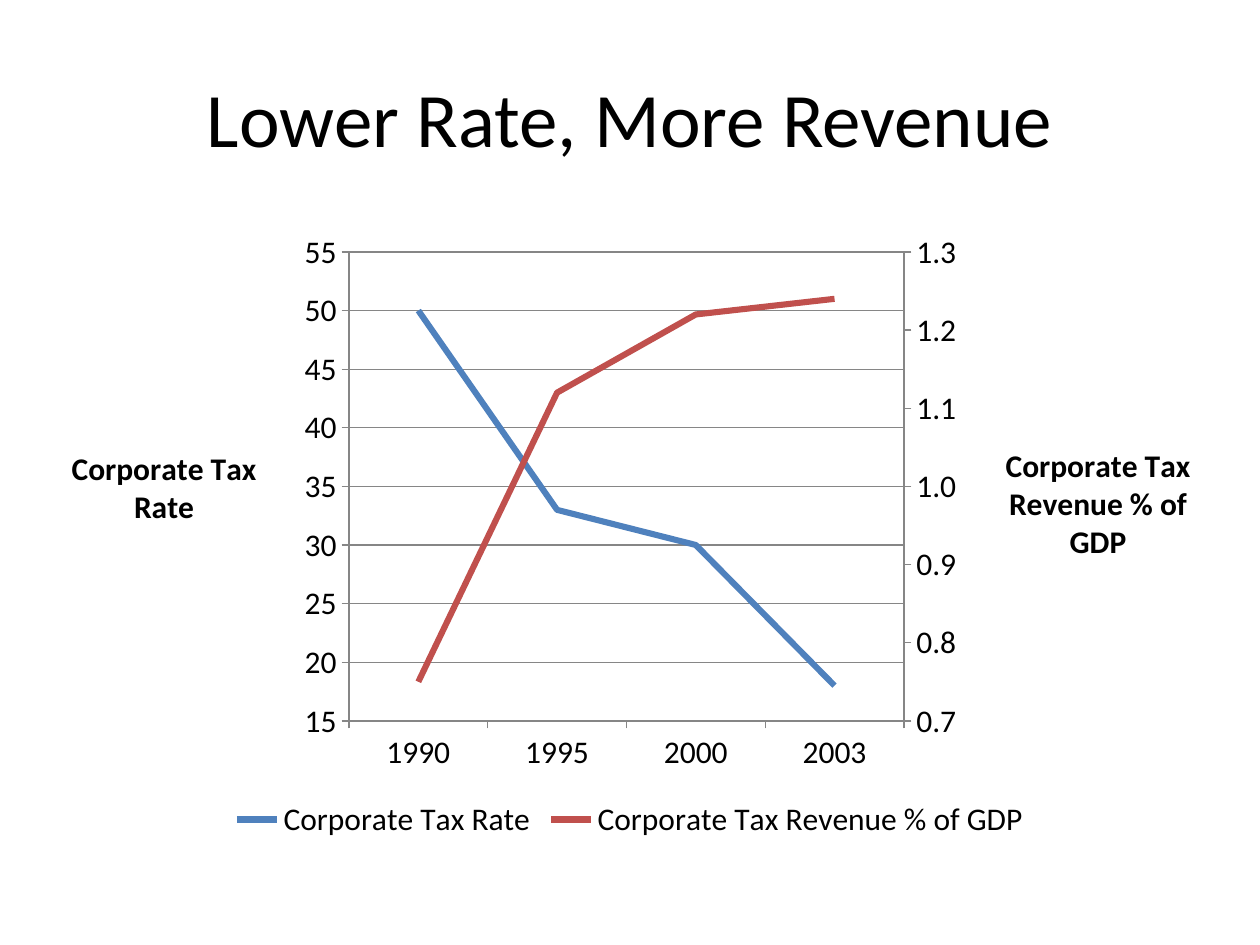
import copy

import lxml.etree
import pptx
import pptx.chart.axis
import pptx.chart.data
import pptx.dml.color
import pptx.enum.chart
import pptx.enum.text
import pptx.oxml.ns
import pptx.util

EMU_PER_PX = 914400 // 126
CHART_BOX = (63, 221, 1134, 624)
FONT = "Calibri"
COLORS = {"text": "000000", "rate": "4F81BD", "revenue": "C0504D", "axis": "868686"}
RATE, REVENUE = "Corporate Tax Rate", "Corporate Tax Revenue % of GDP"
YEARS = [1990, 1995, 2000, 2003]
qn = pptx.oxml.ns.qn


def px(length):
    return pptx.util.Emu(length * EMU_PER_PX)


def color(name):
    return pptx.dml.color.RGBColor.from_string(COLORS[name])


def style_font(font, size=18, bold=False):
    font.name, font.size, font.bold = FONT, pptx.util.Pt(size), bold
    font.color.rgb = color("text")


def write_text(text_frame, text, align=pptx.enum.text.PP_ALIGN.CENTER, **font_format):
    text_frame.text = text
    paragraph = text_frame.paragraphs[0]
    paragraph.alignment = align
    style_font(paragraph.runs[0].font, **font_format)


def set_line(line, name, width):
    line.color.rgb = color(name)
    line.width = pptx.util.Pt(width)


def set_layout(parent, index, **lengths):
    """Place a chart part by px from the chart's top left corner."""
    for old in parent.findall(qn("c:layout")):
        parent.remove(old)
    layout = lxml.etree.Element(qn("c:layout"))
    manual = lxml.etree.SubElement(layout, qn("c:manualLayout"))
    if "w" in lengths:
        lxml.etree.SubElement(manual, qn("c:layoutTarget")).set("val", "inner")
    for mode in ("xMode", "yMode"):
        lxml.etree.SubElement(manual, qn("c:" + mode)).set("val", "edge")
    for name, length in lengths.items():
        whole = CHART_BOX[2] if name in "xw" else CHART_BOX[3]
        lxml.etree.SubElement(manual, qn("c:" + name)).set("val", str(length / whole))
    parent.insert(index, layout)


def add_title(slide):
    title = slide.shapes.title
    title.left, title.top, title.width, title.height = map(px, (63, 38, 1134, 157))
    title.text_frame.vertical_anchor = pptx.enum.text.MSO_ANCHOR.MIDDLE
    write_text(title.text_frame, "Lower Rate, More Revenue", size=44)


def split_to_second_axis(chart):
    """Move the last series to a second line plot and return both value axes."""
    first_axis = chart.value_axis
    first = chart.plots[0]._element
    second = copy.deepcopy(first)
    first.remove(first.findall(qn("c:ser"))[-1])
    second.remove(second.find(qn("c:ser")))
    first.addnext(second)

    category = copy.deepcopy(chart.category_axis._element)
    value = copy.deepcopy(first_axis._element)
    first_axis._element.addnext(value)
    value.addnext(category)
    ids = {category: "50010", value: "50020"}
    for reference, new_id in zip(second.findall(qn("c:axId")), ids.values()):
        reference.set("val", new_id)
    for axis, other in ((category, value), (value, category)):
        axis.find(qn("c:axId")).set("val", ids[axis])
        axis.find(qn("c:crossAx")).set("val", ids[other])
    value.find(qn("c:axPos")).set("val", "r")
    value.find(qn("c:crosses")).set("val", "max")
    pptx.chart.axis.CategoryAxis(category).visible = False
    return first_axis, pptx.chart.axis.ValueAxis(value)


def format_axis(axis):
    style_font(axis.tick_labels.font)
    set_line(axis.format.line, "axis", 0.75)
    axis.major_tick_mark = pptx.enum.chart.XL_TICK_MARK.OUTSIDE
    axis.minor_tick_mark = pptx.enum.chart.XL_TICK_MARK.NONE


def format_value_axis(axis, title, low, high, step, number_format, x, y):
    format_axis(axis)
    axis.minimum_scale, axis.maximum_scale, axis.major_unit = low, high, step
    axis.tick_labels.number_format = number_format
    axis.tick_labels.number_format_is_linked = False
    write_text(axis.axis_title.text_frame, title, bold=True)
    element = axis._element.find(qn("c:title"))
    body = element.find(".//" + qn("a:bodyPr"))
    body.set("rot", "0")
    body.set("vert", "horz")
    set_layout(element, 1, x=x, y=y)


def add_tax_chart(slide):
    data = pptx.chart.data.CategoryChartData(number_format="General")
    data.categories = YEARS
    data.add_series(RATE, [50, 33, 30, 18])
    data.add_series(REVENUE, [0.75, 1.12, 1.22, 1.24])
    chart = slide.shapes.add_chart(
        pptx.enum.chart.XL_CHART_TYPE.LINE, *map(px, CHART_BOX), data
    ).chart
    chart.has_title = False
    style_font(chart.font)

    # Axes
    rate_axis, revenue_axis = split_to_second_axis(chart)
    format_axis(chart.category_axis)
    format_value_axis(rate_axis, RATE, 15, 55, 5, "General", x=3, y=220)
    format_value_axis(revenue_axis, REVENUE, 0.7, 1.3, 0.1, "#,##0.0", x=937, y=217)
    revenue_axis.has_major_gridlines = False
    rate_axis.has_major_gridlines = True
    set_line(rate_axis.major_gridlines.format.line, "axis", 0.75)

    # Lines
    for plot, name in zip(chart.plots, ("rate", "revenue")):
        plot.vary_by_categories = False
        series = plot.series[0]
        series.smooth = False
        series.marker.style = pptx.enum.chart.XL_MARKER_STYLE.NONE
        set_line(series.format.line, name, 3.5)

    # Legend and plot area
    chart.has_legend = True
    chart.legend.position = pptx.enum.chart.XL_LEGEND_POSITION.BOTTOM
    chart.legend.include_in_layout = False
    style_font(chart.legend.font)
    set_layout(rate_axis._element.getparent(), 0, x=286, y=31, w=555, h=469)


def main():
    presentation = pptx.Presentation()
    presentation.slide_width, presentation.slide_height = px(1260), px(945)
    slide = presentation.slides.add_slide(presentation.slide_layouts[5])
    add_title(slide)
    add_tax_chart(slide)
    presentation.save("out.pptx")


if __name__ == "__main__":
    main()
